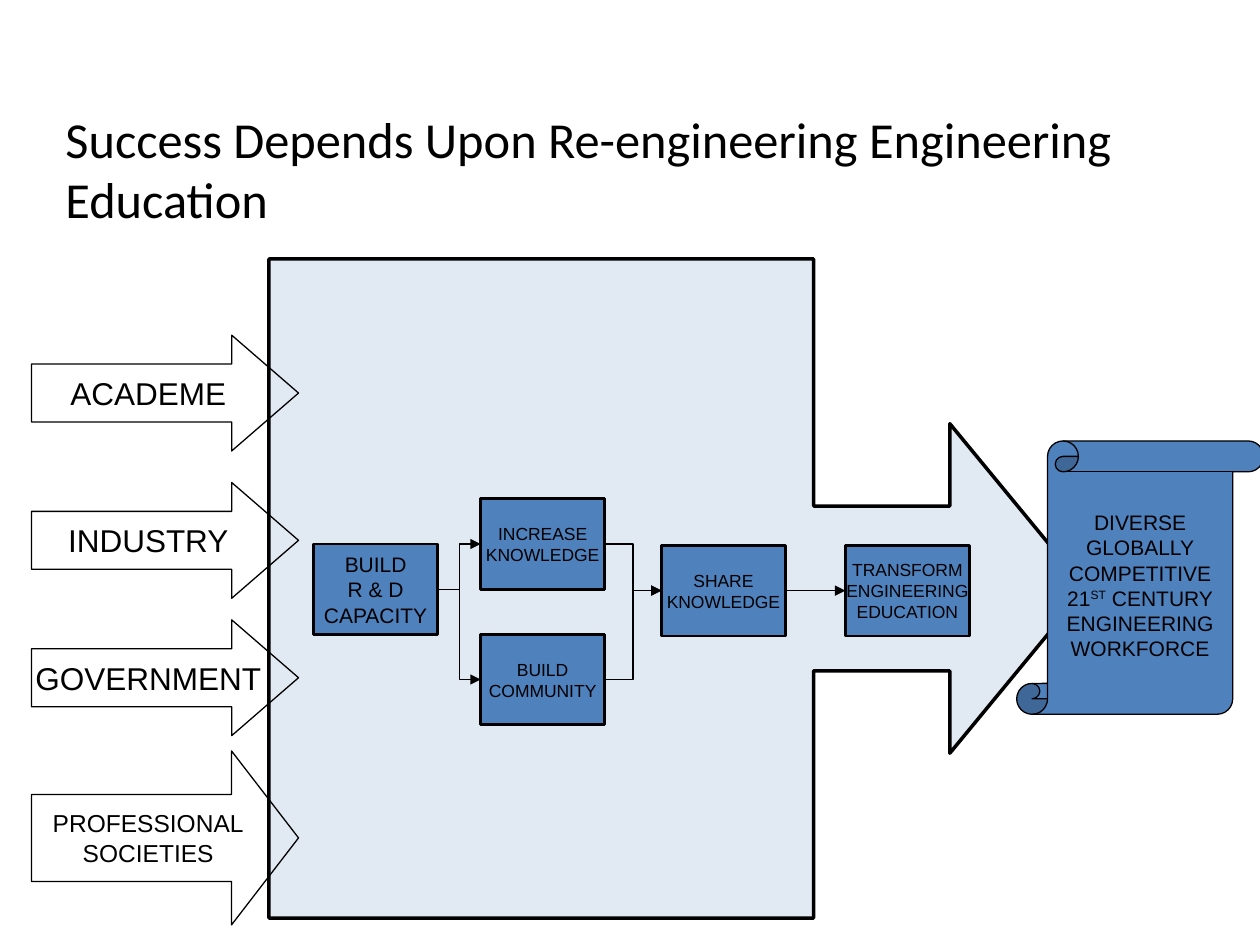
from lxml import etree
from pptx import Presentation
from pptx.dml.color import RGBColor
from pptx.enum.shapes import MSO_CONNECTOR, MSO_SHAPE
from pptx.enum.text import MSO_ANCHOR, MSO_AUTO_SIZE, PP_ALIGN
from pptx.oxml import parse_xml
from pptx.oxml.ns import nsdecls, qn
from pptx.util import Pt

BLACK, BLUE = "000000", "4F81BD"


def color(value):
    """Turn a hex string into a colour."""
    return RGBColor.from_string(value)


def style_font(font, name, size):
    """Set a black font of the given name and size."""
    font.name = name
    font.size = Pt(size)
    font.color.rgb = color(BLACK)


def add_shape(slide, kind, box, fill=None, line=0.75, adjustments=()):
    """Add an outlined preset shape, filled when a colour is given."""
    sp = slide.shapes.add_shape(kind, *map(Pt, box))
    sp.shadow.inherit = False
    for i, value in enumerate(adjustments):
        sp.adjustments[i] = value
    if fill:
        sp.fill.solid()
        sp.fill.fore_color.rgb = color(fill)
    else:
        sp.fill.background()
    sp.line.color.rgb = color(BLACK)
    sp.line.width = Pt(line)
    return sp


def add_label(sp, text, size):
    """Write centred, unwrapped lines; a caret starts and ends superscript."""
    tf = sp.text_frame
    tf.word_wrap = False
    tf.vertical_anchor = MSO_ANCHOR.MIDDLE
    for i, line in enumerate(text.split("\n")):
        p = tf.paragraphs[0] if i == 0 else tf.add_paragraph()
        p.alignment = PP_ALIGN.CENTER
        for j, part in enumerate(line.split("^")):
            r = p.add_run()
            r.text = part
            style_font(r.font, "Arial", size)
            if j % 2:
                r.font._element.set("baseline", "30000")


def add_arrow(slide, kind, start, end):
    """Join the right side of one box to the left side of another."""
    cx = slide.shapes.add_connector(kind, 0, 0, 0, 0)
    cx.begin_connect(start, 3)
    cx.end_connect(end, 1)
    cx.line.color.rgb = color(BLACK)
    cx.line.width = Pt(0.75)
    cx.line._get_or_add_ln().append(
        parse_xml(f'<a:tailEnd {nsdecls("a")} type="triangle"/>'))
    etree.SubElement(cx._element.spPr, qn("a:effectLst"))


def add_title(slide, box):
    """Place the slide title."""
    sp = slide.shapes.title
    sp.left, sp.top, sp.width, sp.height = map(Pt, box)
    tf = sp.text_frame
    tf.text = "Success Depends Upon Re-engineering Engineering Education"
    tf.word_wrap = True
    tf.auto_size = MSO_AUTO_SIZE.NONE
    tf.vertical_anchor = MSO_ANCHOR.MIDDLE
    p = tf.paragraphs[0]
    p.alignment = PP_ALIGN.LEFT
    style_font(p.runs[0].font, "Calibri", 28.8)


def add_callout(slide, box):
    """Draw the pale arrow callout, turned to point right within the box."""
    left, top, width, height = box
    shift = (width - height) / 2
    sp = add_shape(slide, MSO_SHAPE.UP_ARROW_CALLOUT,
                   (left + shift, top - shift, height, width),
                   BLUE, 2, (0.25, 0.25, 0.206, 0.667))
    sp.rotation = 90
    fill = sp._element.spPr.find(qn("a:solidFill"))
    etree.SubElement(fill[0], qn("a:alpha"), val="17000")


def add_stakeholders(slide, box):
    """Stack the stakeholder arrows down the box."""
    left, top, width, _ = box
    arrows = [
        ("ACADEME", 0, 66.2, 0.577, 18),
        ("INDUSTRY", 84.2, 66.2, 0.577, 18),
        ("GOVERNMENT", 162.7, 66.2, 0.577, 18),
        ("PROFESSIONAL\nSOCIETIES", 237.6, 99.4, 0.385, 14),
    ]
    for text, dy, height, head, size in arrows:
        sp = add_shape(slide, MSO_SHAPE.RIGHT_ARROW,
                       (left, top + dy, width, height),
                       adjustments=(0.5, head))
        add_label(sp, text, size)


def add_process(slide, box):
    """Lay out the process steps in the box and link them."""
    left, top, _, _ = box
    steps = {
        "build": ("BUILD\nR & D\nCAPACITY", 0, 25.9, 12),
        "increase": ("INCREASE\nKNOWLEDGE", 95.4, 0, 10),
        "community": ("BUILD\nCOMMUNITY", 95.4, 77.4, 10),
        "share": ("SHARE\nKNOWLEDGE", 198.7, 26.6, 10),
        "transform": ("TRANSFORM\nENGINEERING\nEDUCATION", 303.8, 26.6, 10),
    }
    boxes = {}
    for key, (text, dx, dy, size) in steps.items():
        sp = add_shape(slide, MSO_SHAPE.RECTANGLE,
                       (left + dx, top + dy, 70.8, 51.8), BLUE, 1.5)
        add_label(sp, text, size)
        boxes[key] = sp
    for middle in ("increase", "community"):
        add_arrow(slide, MSO_CONNECTOR.ELBOW, boxes["build"], boxes[middle])
        add_arrow(slide, MSO_CONNECTOR.ELBOW, boxes[middle], boxes["share"])
    add_arrow(slide, MSO_CONNECTOR.STRAIGHT, boxes["share"], boxes["transform"])


def add_outcome(slide, box):
    """Draw the scroll that names the outcome."""
    sp = add_shape(slide, MSO_SHAPE.VERTICAL_SCROLL, box, BLUE,
                   adjustments=(0.125,))
    add_label(sp, "DIVERSE\nGLOBALLY\nCOMPETITIVE\n21^ST^ CENTURY\n"
                  "ENGINEERING\nWORKFORCE", 12)


def main():
    """Build and save the slide."""
    prs = Presentation()
    prs.slide_width, prs.slide_height = Pt(720), Pt(540)
    slide = prs.slides.add_slide(prs.slide_layouts[5])
    add_title(slide, (30.2, 72, 660.2, 48.2))
    add_callout(slide, (153.7, 148, 466.6, 376.6))
    add_stakeholders(slide, (18, 191.5, 152.6, 337))
    add_process(slide, (179.3, 285, 374.6, 129.2))
    add_outcome(slide, (581, 252, 141.1, 156.2))
    prs.save("out.pptx")


if __name__ == "__main__":
    main()
